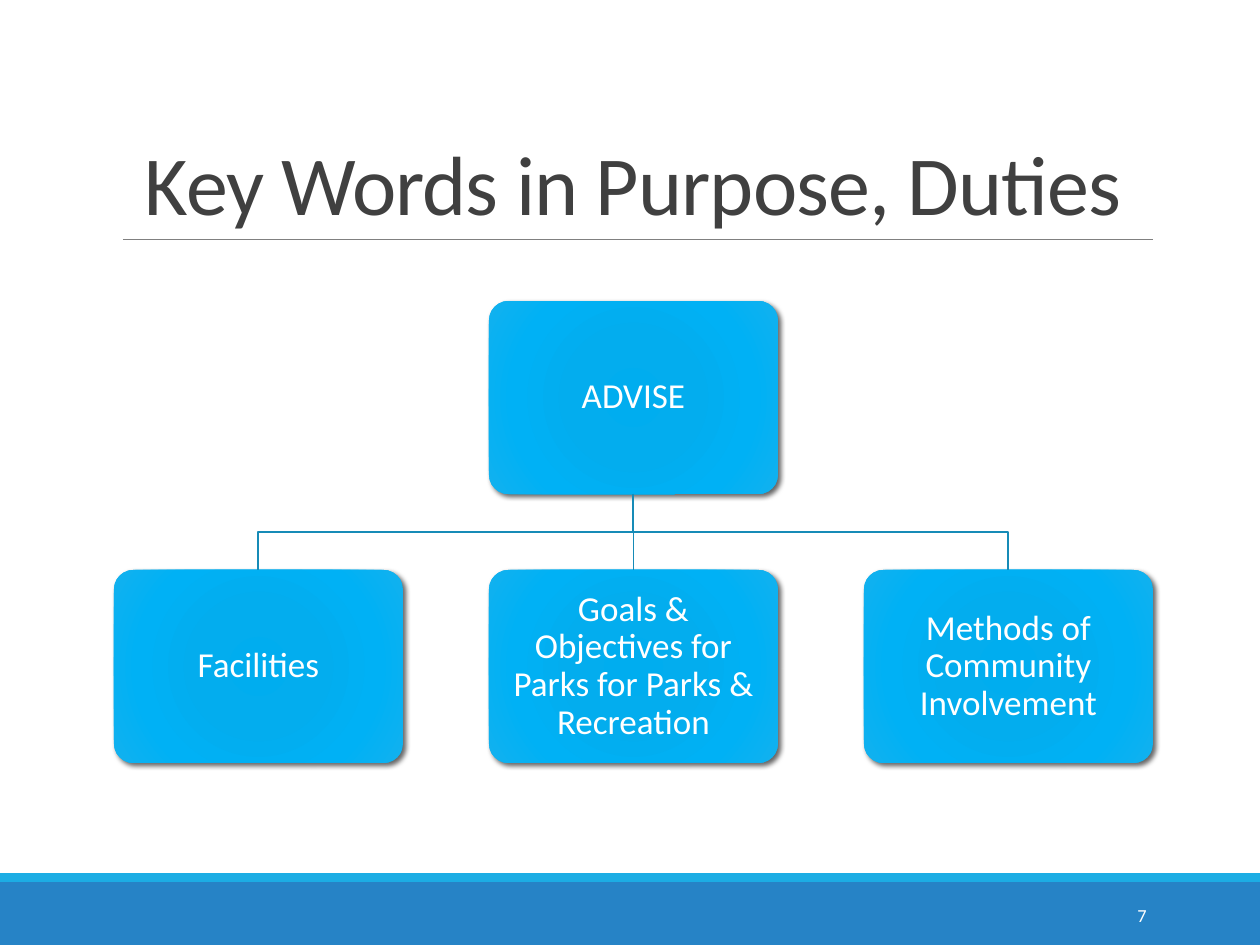
from lxml.etree import SubElement
from pptx import Presentation
from pptx.dml.color import RGBColor
from pptx.enum.shapes import MSO_CONNECTOR, MSO_SHAPE
from pptx.enum.text import MSO_ANCHOR, MSO_AUTO_SIZE, PP_ALIGN
from pptx.oxml import parse_xml
from pptx.oxml.ns import nsdecls, qn
from pptx.util import Pt

SCALE = 914400 / 126  # EMU in one px
FONT = "Calibri"
WHITE = RGBColor(0xFF, 0xFF, 0xFF)
TITLE_GRAY = RGBColor(0x40, 0x40, 0x40)
RULE_GRAY = RGBColor(0x80, 0x80, 0x80)
BAND_BLUE = RGBColor(0x26, 0x83, 0xC6)
STRIP_BLUE = RGBColor(0x1C, 0xAD, 0xE4)
LINK_BLUE = RGBColor(0x16, 0x8B, 0xB7)
GRADIENT = [
    (0, RGBColor(0x00, 0xAD, 0xEF)),
    (34, RGBColor(0x03, 0xAD, 0xEE)),
    (70, RGBColor(0x00, 0xB1, 0xF5)),
    (100, RGBColor(0x12, 0xB1, 0xEE)),
]

BOX_WIDTH, BOX_HEIGHT = 289, 193
BOX_PITCH = 375
PARENT_LEFT, PARENT_TOP = 489, 301
CHILD_TOP = 570
PARENT_BOTTOM = PARENT_TOP + BOX_HEIGHT
PARENT_CENTER = PARENT_LEFT + BOX_WIDTH // 2


def px(*lengths):
    """Turn px lengths into a list of EMU lengths."""
    return [round(length * SCALE) for length in lengths]


def style_text(shape, text, size, color, align, anchor, spacing=1.0):
    frame = shape.text_frame
    frame.text = text
    frame.word_wrap = True
    frame.auto_size = MSO_AUTO_SIZE.NONE
    frame.vertical_anchor = anchor
    paragraph = frame.paragraphs[0]
    paragraph.alignment = align
    paragraph.line_spacing = spacing
    font = paragraph.runs[0].font
    font.name, font.size, font.color.rgb = FONT, Pt(size), color


presentation = Presentation()
presentation.slide_width, presentation.slide_height = px(1260, 945)
slide = presentation.slides.add_slide(presentation.slide_layouts[5])
shapes = slide.shapes

# Footer bands and the rule under the title
for top, height, color in [(882, 63, BAND_BLUE), (873, 9, STRIP_BLUE)]:
    band = shapes.add_shape(MSO_SHAPE.RECTANGLE, *px(0, top, 1260, height))
    band.shadow.inherit = False
    band.fill.solid()
    band.fill.fore_color.rgb = color
    band.line.fill.background()

rule = shapes.add_connector(MSO_CONNECTOR.STRAIGHT, *px(123, 239, 1153, 239))
rule.line.color.rgb = RULE_GRAY
rule.line.width = Pt(0.5)
SubElement(rule._element.spPr, qn("a:effectLst"))

# Title and slide number
title = shapes.title
title.left, title.top, title.width, title.height = px(113, 39, 1040, 200)
style_text(title, "Key Words in Purpose, Duties", 48, TITLE_GRAY,
           PP_ALIGN.CENTER, MSO_ANCHOR.BOTTOM, 0.85)
title.text_frame.paragraphs[0].runs[0].font._element.set("spc", "-50")

number = shapes.add_textbox(*px(1023, 890, 136, 50))
style_text(number, "7", 10.5, WHITE, PP_ALIGN.RIGHT, MSO_ANCHOR.MIDDLE)

# Boxes: one parent above three evenly spaced children
stops = "".join(
    f'<a:gs pos="{position * 1000}"><a:srgbClr val="{color}"/></a:gs>'
    for position, color in GRADIENT
)
gradient_xml = (
    f'<a:gradFill {nsdecls("a")} rotWithShape="1"><a:gsLst>{stops}</a:gsLst>'
    '<a:path path="circle"><a:fillToRect l="50000" t="50000" r="50000" b="50000"/>'
    "</a:path></a:gradFill>"
)
shadow_xml = (
    f'<a:effectLst {nsdecls("a")}><a:outerShdw blurRad="{Pt(3)}" dist="{Pt(2)}" '
    'dir="2700000" algn="tl" rotWithShape="0"><a:srgbClr val="000000">'
    '<a:alpha val="60000"/></a:srgbClr></a:outerShdw></a:effectLst>'
)
box_places = [("ADVISE", PARENT_LEFT, PARENT_TOP)]
for column, text in enumerate([
    "Facilities",
    "Goals & Objectives for Parks for Parks & Recreation",
    "Methods of Community Involvement",
]):
    box_places.append((text, PARENT_LEFT + (column - 1) * BOX_PITCH, CHILD_TOP))

boxes = []
for text, left, top in box_places:
    box = shapes.add_shape(MSO_SHAPE.ROUNDED_RECTANGLE,
                           *px(left, top, BOX_WIDTH, BOX_HEIGHT))
    box.adjustments[0] = 0.1
    box.line.fill.background()
    properties = box._element.spPr
    properties.find(qn("a:ln")).addprevious(parse_xml(gradient_xml))
    properties.append(parse_xml(shadow_xml))
    style_text(box, text, 20, WHITE, PP_ALIGN.CENTER, MSO_ANCHOR.MIDDLE, 0.9)
    frame = box.text_frame
    frame.margin_left = frame.margin_right = px(16)[0]
    frame.margin_top = frame.margin_bottom = px(16)[0]
    boxes.append(box)

# Links from the parent to each child
parent, _, middle_child, _ = boxes
trunk = shapes.add_connector(
    MSO_CONNECTOR.STRAIGHT, *px(PARENT_CENTER, PARENT_BOTTOM, PARENT_CENTER, CHILD_TOP))
trunk.begin_connect(parent, 2)
trunk.end_connect(middle_child, 0)
SubElement(trunk._element.spPr, qn("a:effectLst"))
links = [trunk]

bend = (PARENT_BOTTOM + CHILD_TOP) // 2
for child_center in (PARENT_CENTER - BOX_PITCH, PARENT_CENTER + BOX_PITCH):
    builder = shapes.build_freeform(PARENT_CENTER, PARENT_BOTTOM, scale=SCALE)
    builder.add_line_segments(
        [(PARENT_CENTER, bend), (child_center, bend), (child_center, CHILD_TOP)],
        close=False)
    elbow = builder.convert_to_shape()
    elbow.shadow.inherit = False
    elbow.fill.background()
    links.append(elbow)

for link in links:
    link.line.color.rgb = LINK_BLUE
    link.line.width = Pt(1)

presentation.save("out.pptx")
